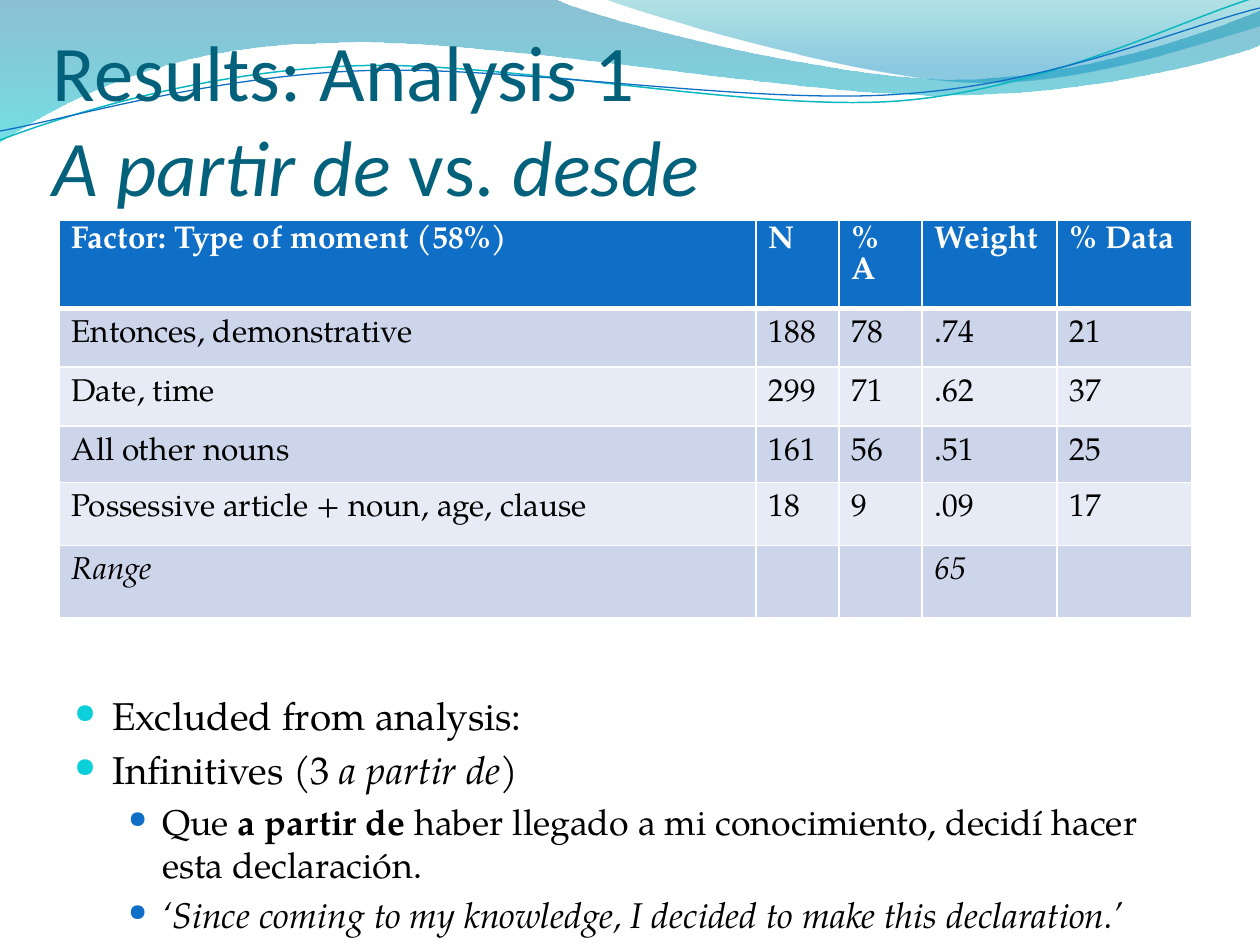
from dataclasses import dataclass

import pptx
import pptx.dml.color
import pptx.enum.text
import pptx.oxml
import pptx.oxml.ns
import pptx.util

EMU_PER_PX = 914400 / 126
qn = pptx.oxml.ns.qn
NAMESPACE = pptx.oxml.ns.nsdecls("a")


@dataclass(frozen=True)
class Theme:
    heading_font: str = "Calibri"
    body_font: str = "TeX Gyre Pagella"
    heading: str = "04617B"
    ink: str = "000000"
    white: str = "FFFFFF"
    blue: str = "0F6FC6"
    teal: str = "0AB8BF"
    cyan: str = "0BD0D9"
    bands: tuple = ("CCD5EA", "E7EBF5")
    title_size: float = 45
    table_size: float = 18
    bullet_sizes: tuple = (22.1, 20.4)


THEME = Theme()

# Each step is a line (one point) or a cubic curve (two controls and an end).
BROAD_WAVE = [
    [(0, 0)], [(554, -1)],
    [(600, 21), (837, 79), (955, 79)], [(1075, 79), (1207, 33), (1260, 11)],
    [(1261, 45)],
    [(1239, 55), (1096, 96), (940, 95)], [(784, 95), (481, 35), (324, 43)],
    [(161, 45), (58, 105), (-1, 142)],
]
CORNER_WAVE = [
    [(604, -1)],
    [(641, 14), (859, 78), (969, 82)], [(1079, 87), (1211, 40), (1260, 26)],
    [(1260, 0)],
]
TEAL_STRAND = [
    [(0, 140)],
    [(60, 117), (199, 72), (349, 66)], [(498, 59), (747, 112), (898, 101)],
    [(1049, 89), (1182, 19), (1257, -3)],
]
BLUE_STRAND = [
    [(0, 131)],
    [(59, 121), (207, 77), (357, 71)], [(508, 64), (752, 106), (903, 94)],
    [(1053, 84), (1186, 26), (1260, 8)],
]

RESULTS = [
    ("Factor: Type of moment (58%)", "N", "% A", "Weight", "% Data"),
    ("Entonces, demonstrative", "188", "78", ".74", "21"),
    ("Date, time", "299", "71", ".62", "37"),
    ("All other nouns", "161", "56", ".51", "25"),
    ("Possessive article + noun, age, clause", "18", "9", ".09", "17"),
    ("Range", "", "", "65", ""),
]
COLUMN_WIDTHS = (697, 83, 83, 135, 135)
ROW_HEIGHTS = (55, 59, 59, 55, 63, 72)

# Level, then runs of (text, style): b is bold, i is italic.
EXCLUSIONS = [
    (0, [("Excluded from analysis:", "")]),
    (0, [("Infinitives (3 ", ""), ("a partir de", "i"), (")", "")]),
    (1, [("Que\u00a0", ""), ("a partir\u00a0de ", "b"),
         ("haber llegado a mi conocimiento, decidí hacer esta declaración.", "")]),
    (1, [("‘Since coming to my knowledge, I decided to make this declaration.’", "i")]),
]


def px(length):
    return pptx.util.Emu(round(length * EMU_PER_PX))


def rgb(colour):
    return pptx.dml.color.RGBColor.from_string(colour)


def style_run(run, font, size, colour, style=""):
    run.font.name = font
    run.font.size = pptx.util.Pt(size)
    run.font.color.rgb = rgb(colour)
    run.font.bold = "b" in style
    run.font.italic = "i" in style


def add_styled_run(paragraph, text, *look):
    run = paragraph.add_run()
    run.text = text
    style_run(run, *look)


def add_outline(slide, steps, left, top, close):
    """Join the step ends with lines, then bend those that have controls."""
    placed = [[(px(left + x), px(top + y)) for x, y in step] for step in steps]
    builder = slide.shapes.build_freeform(*placed[0][0], scale=1.0)
    builder.add_line_segments([step[-1] for step in placed[1:]], close=close)
    outline = builder.convert_to_shape()
    outline.shadow.inherit = False
    segments = list(outline.element.spPr.iter(qn("a:lnTo")))
    for segment, step in zip(segments, placed[1:]):
        if len(step) == 3:
            points = "".join(f'<a:pt x="{x - outline.left}" y="{y - outline.top}"/>'
                             for x, y in step)
            segment.getparent().replace(segment, pptx.oxml.parse_xml(
                f"<a:cubicBezTo {NAMESPACE}>{points}</a:cubicBezTo>"))
    return outline


def add_wave(slide, steps, left, top, stops):
    """Fill an outline downwards through stops of (position, colour, opacity %)."""
    wave = add_outline(slide, steps, left, top, close=True)
    wave.line.fill.background()
    wave.fill.gradient()
    wave.fill.gradient_angle = 270
    for stop, (position, colour, _) in zip(wave.fill.gradient_stops, stops):
        stop.position = position
        stop.color.rgb = rgb(colour)
    colours = list(wave.element.spPr.iter(qn("a:srgbClr")))
    for node, (_, _, opacity) in zip(colours, stops):
        node.append(pptx.oxml.parse_xml(f'<a:alpha {NAMESPACE} val="{opacity * 1000}"/>'))


def add_strand(slide, steps, left, top, colour, weight):
    strand = add_outline(slide, steps, left, top, close=False)
    strand.fill.background()
    strand.line.color.rgb = rgb(colour)
    strand.line.width = pptx.util.Pt(weight)


def add_wave_banner(slide, left, top):
    add_wave(slide, BROAD_WAVE, left, top, [(0, "0074A1", 45), (1, "00C6CF", 55)])
    add_wave(slide, CORNER_WAVE, left, top, [(0, "00A1A9", 30), (0.8, "008BBF", 45)])
    add_strand(slide, TEAL_STRAND, left, top, THEME.teal, 0.85)
    add_strand(slide, BLUE_STRAND, left, top, THEME.blue, 0.75)


def place_title(slide, left, top, width, height):
    """Fill the title and bring it in front of what is already drawn."""
    title = slide.shapes.title
    title.element.getparent().append(title.element)
    title.left, title.top, title.width, title.height = map(px, (left, top, width, height))
    frame = title.text_frame
    frame.auto_size = pptx.enum.text.MSO_AUTO_SIZE.NONE
    frame.word_wrap = True
    frame.vertical_anchor = pptx.enum.text.MSO_ANCHOR.BOTTOM
    frame.margin_left = frame.margin_right = frame.margin_bottom = 0
    frame.margin_top = px(6)
    heading = frame.paragraphs[0]
    heading.alignment = pptx.enum.text.PP_ALIGN.LEFT
    look = (THEME.heading_font, THEME.title_size, THEME.heading)
    add_styled_run(heading, "Results: Analysis 1 ", *look)
    heading.add_line_break()
    for text, style in (("A partir de", "i"), (" vs. ", ""), ("desde", "i")):
        add_styled_run(heading, text, *look, style)


def set_borders(cell, **weights):
    for side, weight in weights.items():
        cell._tc.get_or_add_tcPr().append(pptx.oxml.parse_xml(
            f'<a:ln{side} {NAMESPACE} w="{weight * 12700}"><a:solidFill>'
            f'<a:srgbClr val="{THEME.white}"/></a:solidFill></a:ln{side}>'))


def add_results_table(slide, left, top):
    table = slide.shapes.add_table(
        len(ROW_HEIGHTS), len(COLUMN_WIDTHS), px(left), px(top),
        px(sum(COLUMN_WIDTHS)), px(sum(ROW_HEIGHTS))).table
    for column, width in zip(table.columns, COLUMN_WIDTHS):
        column.width = px(width)
    for r, (row, height) in enumerate(zip(RESULTS, ROW_HEIGHTS)):
        table.rows[r].height = px(height)
        style = "b" if r == 0 else "i" if row[0] == "Range" else ""
        for c, text in enumerate(row):
            cell = table.cell(r, c)
            set_borders(cell, L=1, R=1, T=3 if r == 1 else 1, B=3 if r == 0 else 1)
            cell.fill.solid()
            cell.fill.fore_color.rgb = rgb(THEME.bands[(r - 1) % 2] if r else THEME.blue)
            entry = cell.text_frame.paragraphs[0]
            entry.text = text
            entry.line_spacing = 1.15 if r else 1.0
            for run in entry.runs:
                style_run(run, THEME.body_font, THEME.table_size,
                          THEME.ink if r else THEME.white, style)


def set_bullet(paragraph, level):
    margin, hang, colour, percent = ((38, 38, THEME.cyan, 70), (88, 34, THEME.blue, 66))[level]
    properties = paragraph._p.get_or_add_pPr()
    properties.set("marL", str(px(margin)))
    properties.set("indent", str(px(-hang)))
    for node in (f'buClr {NAMESPACE}><a:srgbClr val="{colour}"/></a:buClr>',
                 f'buSzPct {NAMESPACE} val="{percent * 1000}"/>',
                 f'buChar {NAMESPACE} char="●"/>'):
        properties.append(pptx.oxml.parse_xml("<a:" + node))


def add_exclusions(slide, left, top, width, height):
    frame = slide.shapes.add_textbox(*map(px, (left, top, width, height))).text_frame
    frame.word_wrap = True
    frame.margin_top = frame.margin_bottom = 0
    for n, (level, runs) in enumerate(EXCLUSIONS):
        point = frame.add_paragraph() if n else frame.paragraphs[0]
        size = THEME.bullet_sizes[level]
        point.level = level
        point.space_before = pptx.util.Pt(round(size * 0.2, 1) if n else 0)
        set_bullet(point, level)
        for text, style in runs:
            add_styled_run(point, text, THEME.body_font, size, THEME.ink, style)


def main():
    deck = pptx.Presentation()
    deck.slide_width, deck.slide_height = px(1260), px(945)
    slide = deck.slides.add_slide(deck.slide_layouts[5])
    add_wave_banner(slide, 0, 0)
    place_title(slide, 53, 52, 1134, 160)
    add_exclusions(slide, 62, 692, 1134, 250)
    add_results_table(slide, 59, 220)
    deck.save("out.pptx")


if __name__ == "__main__":
    main()
